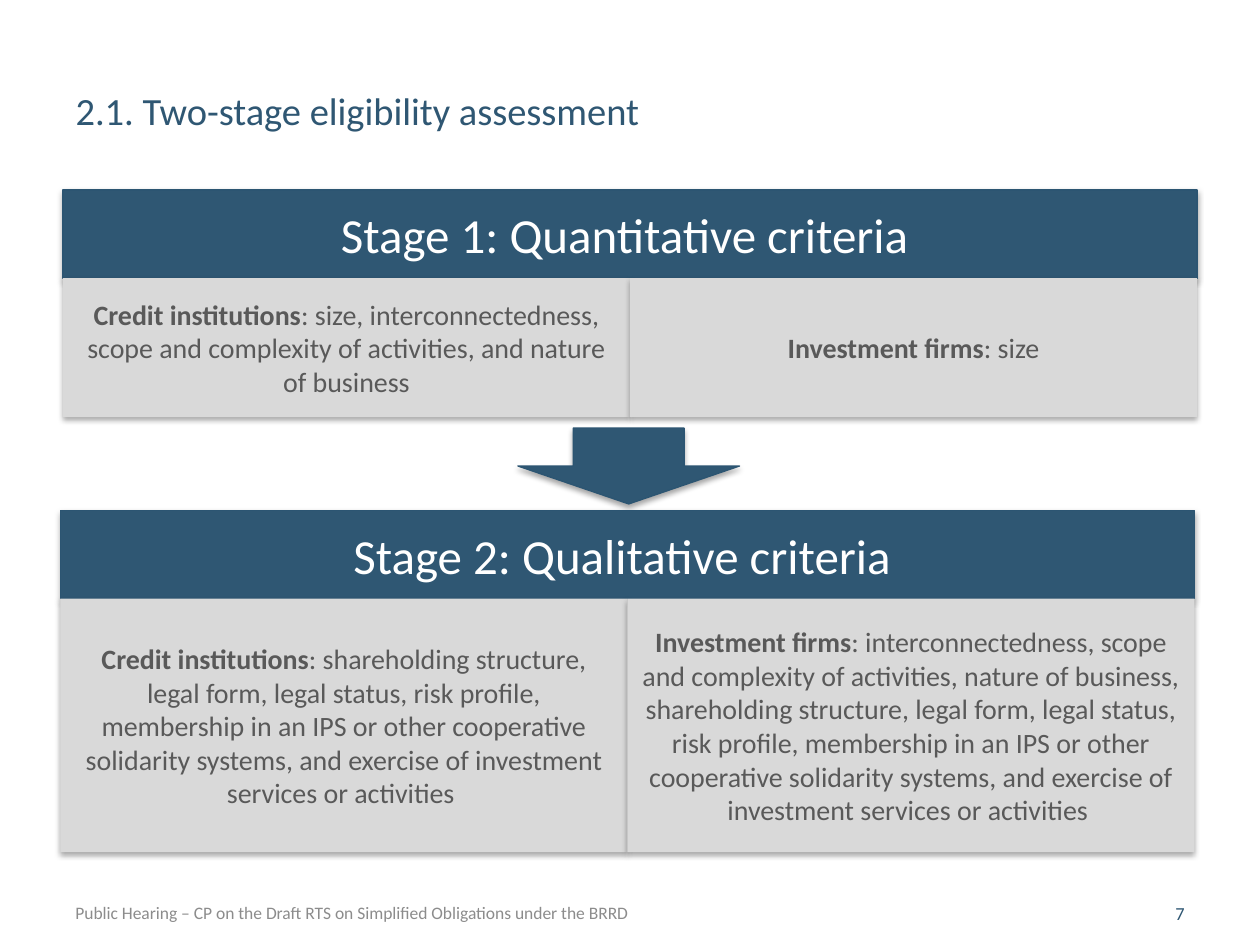
"""Build the slide on the two-stage eligibility assessment."""
import pptx
import pptx.dml.color
import pptx.enum.shapes
import pptx.enum.text
import pptx.util

Cm = pptx.util.Cm
Align = pptx.enum.text.PP_ALIGN
Anchor = pptx.enum.text.MSO_ANCHOR
Preset = pptx.enum.shapes.MSO_SHAPE

COLORS = {
    "navy": "2F5773",
    "outline": "2C5572",
    "panel": "D9D9D9",
    "body": "595959",
    "footer": "8C8C8C",
    "white": "FFFFFF",
}


def rgb(name):
    return pptx.dml.color.RGBColor.from_string(COLORS[name])


def write(shape, text, lead="", size=16, color="body", align=Align.CENTER, anchor=Anchor.MIDDLE):
    frame = shape.text_frame
    frame.word_wrap = True
    frame.auto_size = pptx.enum.text.MSO_AUTO_SIZE.NONE
    frame.vertical_anchor = anchor
    paragraph = frame.paragraphs[0]
    paragraph.alignment = align
    for part, bold in ((lead, True), (text, False)):
        if part:
            run = paragraph.add_run()
            run.text = part
            run.font.name = "Calibri"
            run.font.size = pptx.util.Pt(size)
            run.font.bold = bold
            run.font.color.rgb = rgb(color)


presentation = pptx.Presentation()
presentation.slide_width = Cm(25.4)
presentation.slide_height = Cm(19.05)
slide = presentation.slides.add_slide(presentation.slide_layouts[5])
shapes = slide.shapes

title = shapes.title
title.left, title.top, title.width, title.height = Cm(1.27), Cm(1.63), Cm(18.52), Cm(1.55)
write(title, "2.1. Two-stage eligibility assessment", size=22, color="navy",
      align=Align.LEFT, anchor=Anchor.TOP)

footer = shapes.add_textbox(Cm(1.27), Cm(18.06), Cm(13.67), Cm(0.61))
write(footer, "Public Hearing – CP on the Draft RTS on Simplified Obligations under the BRRD",
      size=10, color="footer", align=Align.LEFT, anchor=Anchor.TOP)

page_number = shapes.add_textbox(Cm(21.97), Cm(18.06), Cm(2.16), Cm(0.61))
write(page_number, "7", size=10.5, color="navy", align=Align.RIGHT, anchor=Anchor.TOP)

stages = [
    ("Stage 1: Quantitative criteria ", 1.27, 3.83, 2.8, [
        ("Credit institutions", ": size, interconnectedness, scope and complexity of activities, "
         "and nature of business"),
        ("Investment firms", ": size"),
    ]),
    ("Stage 2: Qualitative criteria ", 1.22, 10.29, 5.11, [
        ("Credit institutions", ": shareholding structure, legal form, legal status, risk profile, "
         "membership in an IPS or other cooperative solidarity systems, and exercise of "
         "investment services or activities "),
        ("Investment firms", ": interconnectedness, scope and complexity of activities, nature of "
         "business, shareholding structure, legal form, legal status, risk profile, membership "
         "in an IPS or other cooperative solidarity systems, and exercise of investment "
         "services or activities "),
    ]),
]
panel_width = 11.43
header_height = 1.78

arrow = shapes.add_shape(Preset.DOWN_ARROW, Cm(10.44), Cm(8.63), Cm(4.47), Cm(1.53))
navy_shapes = [arrow]

for heading, left, top, panel_height, panels in stages:
    header = shapes.add_shape(Preset.RECTANGLE, Cm(left), Cm(top),
                              Cm(2 * panel_width), Cm(header_height))
    write(header, heading, size=28, color="white")
    navy_shapes.append(header)
    for column, (lead, text) in enumerate(panels):
        panel = shapes.add_shape(Preset.RECTANGLE, Cm(left + column * panel_width),
                                 Cm(top + header_height), Cm(panel_width), Cm(panel_height))
        panel.fill.solid()
        panel.fill.fore_color.rgb = rgb("panel")
        panel.line.fill.background()
        write(panel, text, lead=lead)

for shape in navy_shapes:
    shape.fill.solid()
    shape.fill.fore_color.rgb = rgb("navy")
    shape.line.color.rgb = rgb("outline")
    shape.line.width = pptx.util.Pt(0.75)

presentation.save("out.pptx")
